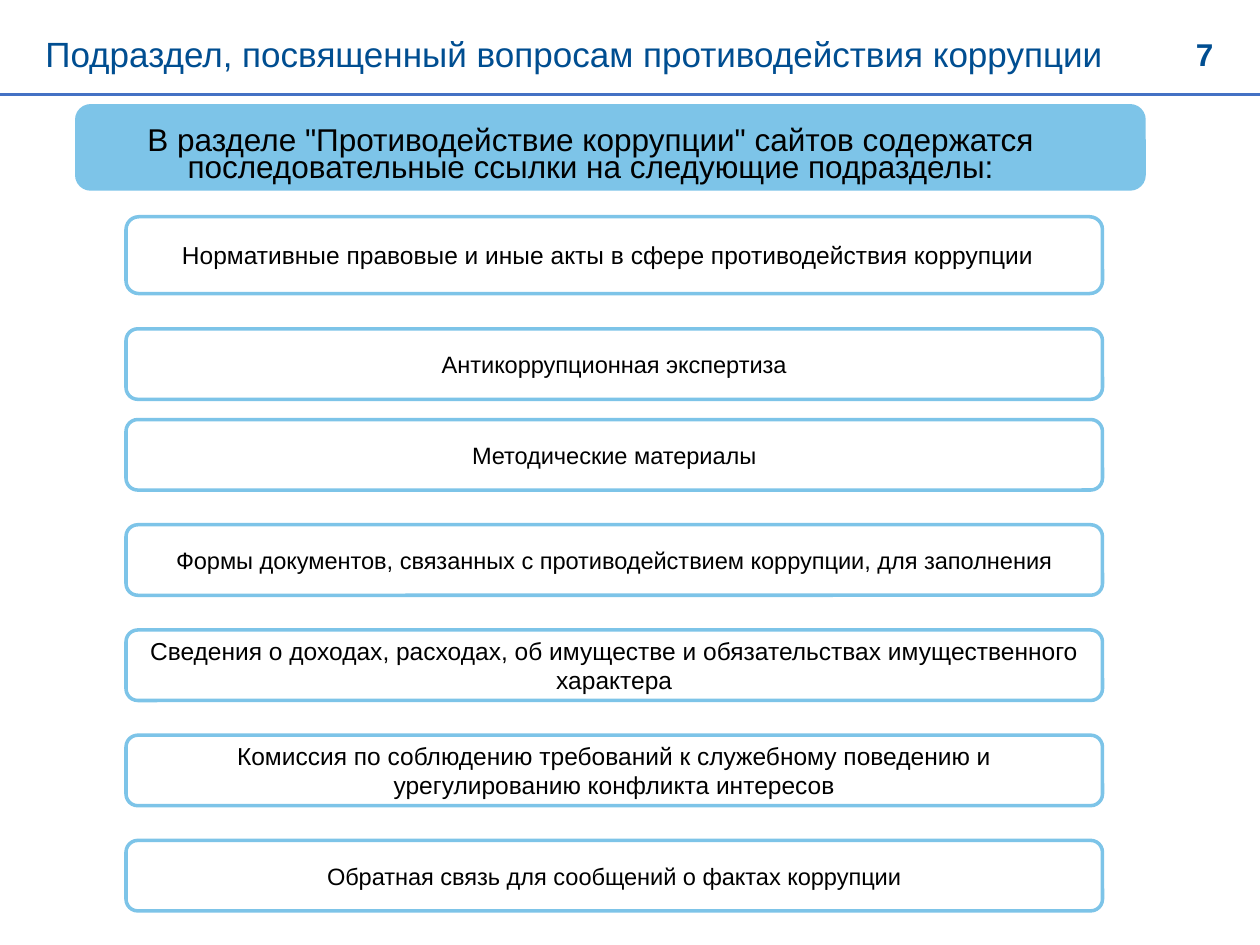
from lxml import etree
from pptx import Presentation
from pptx import util as u
from pptx.dml.color import RGBColor
from pptx.enum import shapes, text
from pptx.oxml import ns

THEME = {
    "font": "Arial", "navy": "004E91", "rule": "4471C4", "sky": "7DC4E8",
    "white": "FFFFFF", "black": "000000",
    "title": 20, "heading": 18, "item": 14, "item_small": 13.5,
}

deck = Presentation()
deck.slide_width, deck.slide_height = u.Inches(10), u.Inches(7.5)
page = deck.slides.add_slide(deck.slide_layouts[5])


def write(box, words, size, color, align, anchor, margins, bold=False):
    """Fill a box with one formatted paragraph; margins are left, top, right, bottom."""
    frame = box.text_frame
    frame.text = words
    frame.word_wrap = True
    frame.auto_size = text.MSO_AUTO_SIZE.NONE
    frame.vertical_anchor = anchor
    (frame.margin_left, frame.margin_top,
     frame.margin_right, frame.margin_bottom) = map(u.Inches, margins)
    para = frame.paragraphs[0]
    para.alignment = align
    span = para.runs[0]
    span.font.name = THEME["font"]
    span.font.size = u.Pt(THEME[size])
    span.font.bold = bold
    span.font.color.rgb = RGBColor.from_string(THEME[color])
    return para


def rounded(left, top, width, height, fill):
    """Add a rounded box with the sky-blue outline."""
    box = page.shapes.add_shape(shapes.MSO_SHAPE.ROUNDED_RECTANGLE,
                                *map(u.Inches, (left, top, width, height)))
    box.shadow.inherit = False
    box.fill.solid()
    box.fill.fore_color.rgb = RGBColor.from_string(THEME[fill])
    box.line.color.rgb = RGBColor.from_string(THEME["sky"])
    box.line.width = u.Pt(2)
    return box


LEFT, CENTER = text.PP_ALIGN.LEFT, text.PP_ALIGN.CENTER
TOP, MIDDLE = text.MSO_ANCHOR.TOP, text.MSO_ANCHOR.MIDDLE

# Title and page number
title = page.shapes.title
title.left, title.top, title.width, title.height = map(u.Inches, (0.35, 0.25, 8.94, 0.35))
para = write(title, "Подраздел, посвященный вопросам противодействия коррупции",
             "title", "navy", LEFT, TOP, (0.01, 0.01, 0, 0))
para.space_before = u.Pt(1)
number = page.shapes.add_textbox(*map(u.Inches, (9.42, 0.25, 0.38, 0.35)))
write(number, "7", "heading", "navy", LEFT, MIDDLE, (0.07, 0.04, 0.07, 0.04), bold=True)

# Rule under the title, a tenth of the way down
rule_top = deck.slide_height // 10
rule = page.shapes.add_connector(shapes.MSO_CONNECTOR.STRAIGHT,
                                 0, rule_top, deck.slide_width, rule_top)
rule.line.color.rgb = RGBColor.from_string(THEME["rule"])
rule.line.width = u.Pt(1.5)
etree.SubElement(rule._element.spPr, ns.qn("a:effectLst"))

# Heading band
band = rounded(0.61, 0.84, 8.47, 0.66, "sky")
para = write(band, 'В разделе "Противодействие коррупции" сайтов содержатся '
             "последовательные ссылки на следующие подразделы:",
             "heading", "black", CENTER, TOP, (0.1, 0.16, 0.41, 0))
para.line_spacing = u.Pt(15.8)

# Subsections: two lead rows, then five rows at an even pitch
FIRST, PITCH, ROW = 3.33, 0.835, 0.56
items = [
    ("Нормативные правовые и иные акты в сфере противодействия коррупции", "item"),
    ("Антикоррупционная экспертиза", "item_small"),
    ("Методические материалы", "item_small"),
    ("Формы документов, связанных с противодействием коррупции, для заполнения", "item_small"),
    ("Сведения о доходах, расходах, об имуществе и обязательствах "
     "имущественного характера", "item"),
    ("Комиссия по соблюдению требований к служебному поведению и "
     "урегулированию конфликта интересов", "item"),
    ("Обратная связь для сообщений о фактах коррупции", "item_small"),
]
rows = [(1.72, 0.61), (2.61, ROW)] + [(FIRST + PITCH * step, ROW) for step in range(5)]
for index, ((words, size), (top, height)) in enumerate(zip(items, rows)):
    box = rounded(1, top, 7.75, height, "white")
    right = 0.2 if index == 0 else 0.1
    write(box, words, size, "black", CENTER, MIDDLE, (0.1, 0.05, right, 0.05))

deck.save("out.pptx")
